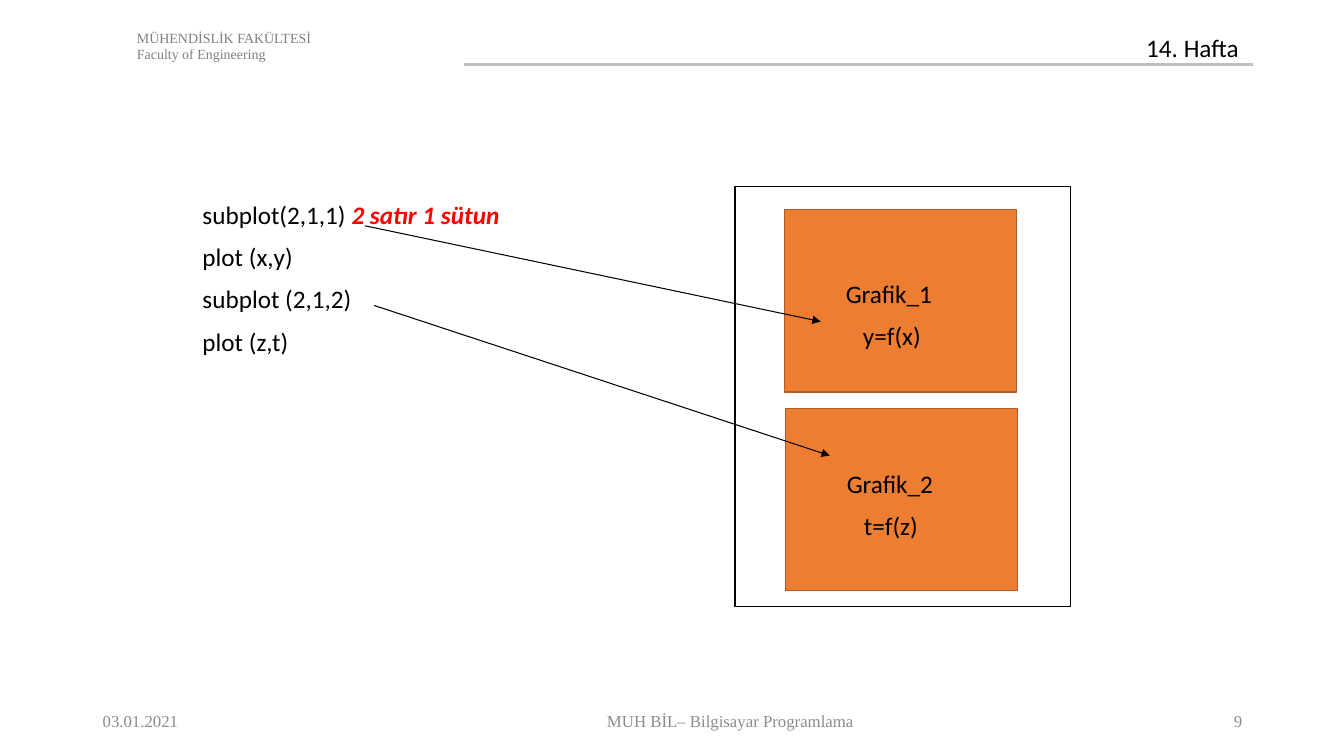
from lxml import etree
from pptx import Presentation
from pptx.dml.color import RGBColor
from pptx.enum.shapes import MSO_CONNECTOR as Connector, MSO_SHAPE as Shape
from pptx.enum.text import MSO_ANCHOR as Anchor, PP_ALIGN as Align
from pptx.oxml.ns import qn
from pptx.util import Inches, Pt

COLORS = {
    "text": "000000", "accent": "FF0000", "panel": "ED7D31", "edge": "AF5C24",
    "rule": "BFBFBF", "header": "808080", "footer": "8C8C8C",
}
BODY, SERIF = "Calibri", "Times New Roman"


def color(name):
    return RGBColor.from_string(COLORS[name])


def add_span(para, text, size, font, tint, strong=False):
    span = para.add_run()
    span.text = text
    span.font.size = Pt(size)
    span.font.name = font
    span.font.color.rgb = color(tint)
    span.font.bold = span.font.italic = strong


def add_text(shapes, area, lines, size=18, font=BODY, tint="text", gap=0,
             align=Align.LEFT, anchor=Anchor.TOP, wrap=True):
    frame = shapes.add_textbox(*map(Inches, area)).text_frame
    frame.word_wrap = wrap
    frame.vertical_anchor = anchor
    for index, line in enumerate(lines):
        para = frame.add_paragraph() if index else frame.paragraphs[0]
        para.alignment = align
        para.space_before = Pt(gap if index else 0)
        add_span(para, line, size, font, tint)
    return frame


def add_line(shapes, start, end, tint, width, arrow=False):
    line = shapes.add_connector(Connector.STRAIGHT, *map(Inches, start + end))
    line.line.color.rgb = color(tint)
    line.line.width = Pt(width)
    if arrow:
        etree.SubElement(line.line._get_or_add_ln(), qn("a:tailEnd"), type="triangle")
    etree.SubElement(line._element.spPr, qn("a:effectLst"))


def add_rectangle(shapes, area, edge, width, fill=None):
    box = shapes.add_shape(Shape.RECTANGLE, *map(Inches, area))
    box.shadow.inherit = False
    if fill:
        box.fill.solid()
        box.fill.fore_color.rgb = color(fill)
    else:
        box.fill.background()
    box.line.color.rgb = color(edge)
    box.line.width = Pt(width)


def add_header(page, left, top, width):
    shapes = page.shapes
    add_line(shapes, (left + 3.34, top + 0.4), (left + width, top + 0.4), "rule", 1.5)
    add_text(shapes, (left, top, 6.67, 0.44),
             ["MÜHENDİSLİK FAKÜLTESİ", "Faculty of Engineering"], 10, SERIF, "header")
    add_text(shapes, (left + width - 1.16, top + 0.03, 1.15, 0.4), ["14. Hafta"], wrap=False)


def add_code(page, left, top, width, height):
    lines = ["subplot(2,1,1) ", "plot (x,y)", "subplot (2,1,2)", "plot (z,t)"]
    frame = add_text(page.shapes, (left, top, width, height), lines, gap=8.5)
    add_span(frame.paragraphs[0], "2 satır 1 sütun", 18, BODY, "accent", strong=True)


def add_figure(page, left, top, width, height):
    shapes = page.shapes.add_group_shape().shapes
    panels = [
        (left + 0.49, top + 0.23, 0.63, ["Grafik_1", "y=f(x)"]),
        (left + 0.5, top + 2.2, 0.55, ["Grafik_2", "t=f(z)"]),
    ]
    for x, y, drop, lines in panels:
        add_rectangle(shapes, (x, y, 2.3, 1.81), "edge", 1, "panel")
        frame = add_text(shapes, (x + 0.51, y + drop, 1.28, 0.85), lines, gap=8.5)
        frame.paragraphs[1]._p.get_or_add_pPr().set("marL", str(Inches(0.17)))
    add_rectangle(shapes, (left, top, width, height), "text", 0.75)


def add_arrows(page):
    for start, end in [((3.62, 2.24), (8.14, 3.19)), ((3.71, 3.03), (8.23, 4.52))]:
        add_line(page.shapes, start, end, "text", 0.75, arrow=True)


def add_footer(page, left, top, width, height):
    parts = [
        (left, 1.57, "03.01.2021", Align.LEFT),
        (left + 1.81, 9.03, "MUH BİL– Bilgisayar Programlama", Align.CENTER),
        (left + width - 0.45, 0.45, "9", Align.RIGHT),
    ]
    for x, span_width, text, align in parts:
        add_text(page.shapes, (x, top, span_width, height), [text], 12, SERIF, "footer",
                 align=align, anchor=Anchor.MIDDLE)


def main():
    deck = Presentation()
    deck.slide_width, deck.slide_height = Inches(13.33), Inches(7.5)
    page = deck.slides.add_slide(deck.slide_layouts[6])
    add_header(page, 1.26, 0.24, 11.17)
    add_code(page, 1.91, 1.93, 4.18, 1.76)
    add_figure(page, 7.29, 1.85, 3.33, 4.17)
    add_arrows(page)
    add_footer(page, 0.92, 6.95, 11.5, 0.4)
    deck.save("out.pptx")


if __name__ == "__main__":
    main()
